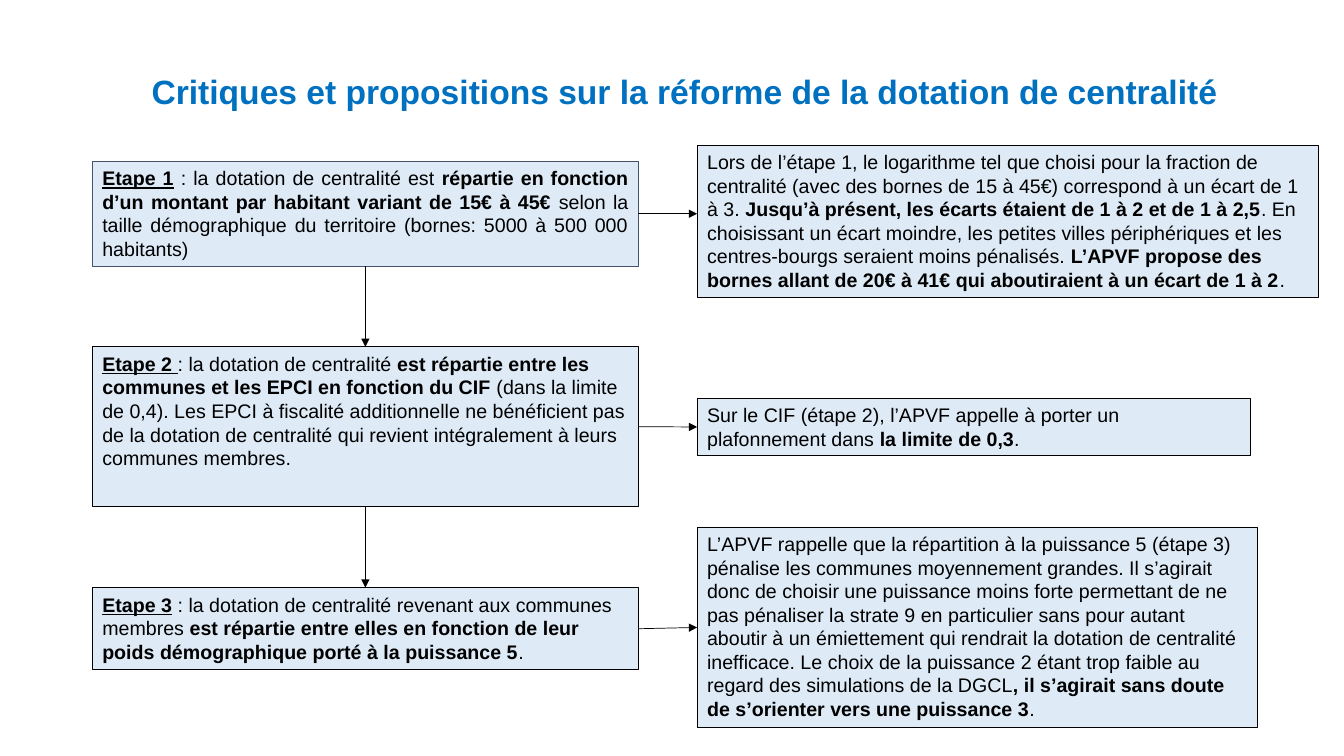
from lxml import etree
from pptx import Presentation
from pptx.dml.color import RGBColor
from pptx.enum.shapes import MSO_CONNECTOR, MSO_SHAPE
from pptx.enum.text import MSO_ANCHOR, PP_ALIGN
from pptx.oxml.ns import qn
from pptx.util import Pt

RECTANGLE = MSO_SHAPE.RECTANGLE
STRAIGHT = MSO_CONNECTOR.STRAIGHT
TOP = MSO_ANCHOR.TOP
LEFT, CENTER, JUSTIFY = PP_ALIGN.LEFT, PP_ALIGN.CENTER, PP_ALIGN.JUSTIFY
TOP_SIDE, LEFT_SIDE, BOTTOM_SIDE, RIGHT_SIDE = range(4)

BLACK = RGBColor(0x00, 0x00, 0x00)
BLUE = RGBColor(0x00, 0x70, 0xC0)
PALE_BLUE = RGBColor(0xDE, 0xEB, 0xF7)
SLATE = RGBColor(0x44, 0x54, 0x6A)

STEP_LEFT, STEP_WIDTH, NOTE_LEFT = 66, 390, 498

STEPS = [
    (115.2, 75, SLATE, JUSTIFY, "Etape 1", [
        " : la dotation de centralité est ",
        "répartie en fonction d’un montant par habitant variant de 15€ à 45€ ",
        "selon la taille démographique du territoire (bornes: 5000 à 500 000 habitants) "]),
    (247.8, 114, BLACK, LEFT, "Etape 2 ", [
        ": la dotation de centralité ",
        "est répartie entre les communes et les EPCI en fonction du CIF",
        " (dans la limite de 0,4). Les EPCI à fiscalité additionnelle ne bénéficient pas "
        "de la dotation de centralité qui revient intégralement à leurs communes membres."]),
    (419.8, 58.6, BLACK, LEFT, "Etape 3", [
        " : la dotation de centralité revenant aux communes membres ",
        "est répartie entre elles en fonction de leur poids démographique porté à la puissance 5",
        "."]),
]

NOTES = [
    (103.7, 444, 108.7, [
        "Lors de l’étape 1, le logarithme tel que choisi pour la fraction de centralité "
        "(avec des bornes de 15 à 45€) correspond à un écart de 1 à 3. ",
        "Jusqu’à présent, les écarts étaient de 1 à 2 et de 1 à 2,5",
        ". En choisissant un écart moindre, les petites villes périphériques et les "
        "centres-bourgs seraient moins pénalisés. ",
        "L’APVF propose des bornes allant de 20€ à 41€ qui aboutiraient à un écart de 1 à 2",
        "."]),
    (284.4, 395.3, 41.2, [
        "Sur le CIF (étape 2), l’APVF appelle à porter un plafonnement dans ",
        "la limite de 0,3",
        "."]),
    (376.6, 400.3, 143.2, [
        "L’APVF rappelle que la répartition à la puissance 5 (étape 3) pénalise les communes "
        "moyennement grandes. Il s’agirait donc de choisir une puissance moins forte "
        "permettant de ne pas pénaliser la strate 9 en particulier sans pour autant aboutir "
        "à un émiettement qui rendrait la dotation de centralité inefficace. Le choix de la "
        "puissance 2 étant trop faible au regard des simulations de la DGCL",
        ", il s’agirait sans doute de s’orienter vers une puissance 3",
        "."]),
]


class FlowPage:
    """Draws the title, boxes and arrows of one page in a shared style."""

    def __init__(self, page, font="Arial", size=14):
        self.page, self.font, self.size = page, font, size

    def span(self, para, text, bold=False, underline=False, size=None, color=BLACK):
        span = para.add_run()
        span.text = text
        span.font.name = self.font
        span.font.size = Pt(size or self.size)
        span.font.bold = bold
        span.font.underline = underline
        span.font.color.rgb = color

    def title(self, left, top, width, height, text):
        box = self.page.shapes.add_textbox(Pt(left), Pt(top), Pt(width), Pt(height))
        box.text_frame.word_wrap = True
        para = box.text_frame.paragraphs[0]
        para.alignment = CENTER
        self.span(para, text, bold=True, size=24, color=BLUE)

    def box(self, left, top, width, height, texts, heading=None, outline=BLACK, align=LEFT):
        box = self.page.shapes.add_shape(RECTANGLE, Pt(left), Pt(top), Pt(width), Pt(height))
        box.shadow.inherit = False
        box.fill.solid()
        box.fill.fore_color.rgb = PALE_BLUE
        box.line.color.rgb = outline
        box.line.width = Pt(0.75)
        box.text_frame.word_wrap = True
        box.text_frame.vertical_anchor = TOP
        para = box.text_frame.paragraphs[0]
        para.alignment = align
        if heading:
            self.span(para, heading, bold=True, underline=True)
        for index, text in enumerate(texts):
            self.span(para, text, bold=index % 2 == 1)
        return box

    def arrow(self, source, source_side, target, target_side, joined=True):
        arrow = self.page.shapes.add_connector(STRAIGHT, 0, 0, 0, 0)
        arrow.begin_connect(source, source_side)
        if joined:
            arrow.end_connect(target, target_side)
        else:
            arrow.end_x, arrow.end_y = target.left, arrow.begin_y
        arrow.line.color.rgb = BLACK
        arrow.line.width = Pt(0.5)
        etree.SubElement(arrow.line._get_or_add_ln(), qn("a:tailEnd"), type="triangle")
        etree.SubElement(arrow._element.spPr, qn("a:effectLst"))


def main():
    deck = Presentation()
    deck.slide_width, deck.slide_height = Pt(960), Pt(540)
    flow = FlowPage(deck.slides.add_slide(deck.slide_layouts[6]))
    flow.title(80, 47, 818, 36,
               "Critiques et propositions sur la réforme de la dotation de centralité")
    steps = [flow.box(STEP_LEFT, top, STEP_WIDTH, height, texts, heading, outline, align)
             for top, height, outline, align, heading, texts in STEPS]
    notes = [flow.box(NOTE_LEFT, top, width, height, texts)
             for top, width, height, texts in NOTES]
    for upper, lower in zip(steps, steps[1:]):
        flow.arrow(upper, BOTTOM_SIDE, lower, TOP_SIDE)
    for index, (step, note) in enumerate(zip(steps, notes)):
        flow.arrow(step, RIGHT_SIDE, note, LEFT_SIDE, joined=index > 0)
    deck.save("out.pptx")


if __name__ == "__main__":
    main()
